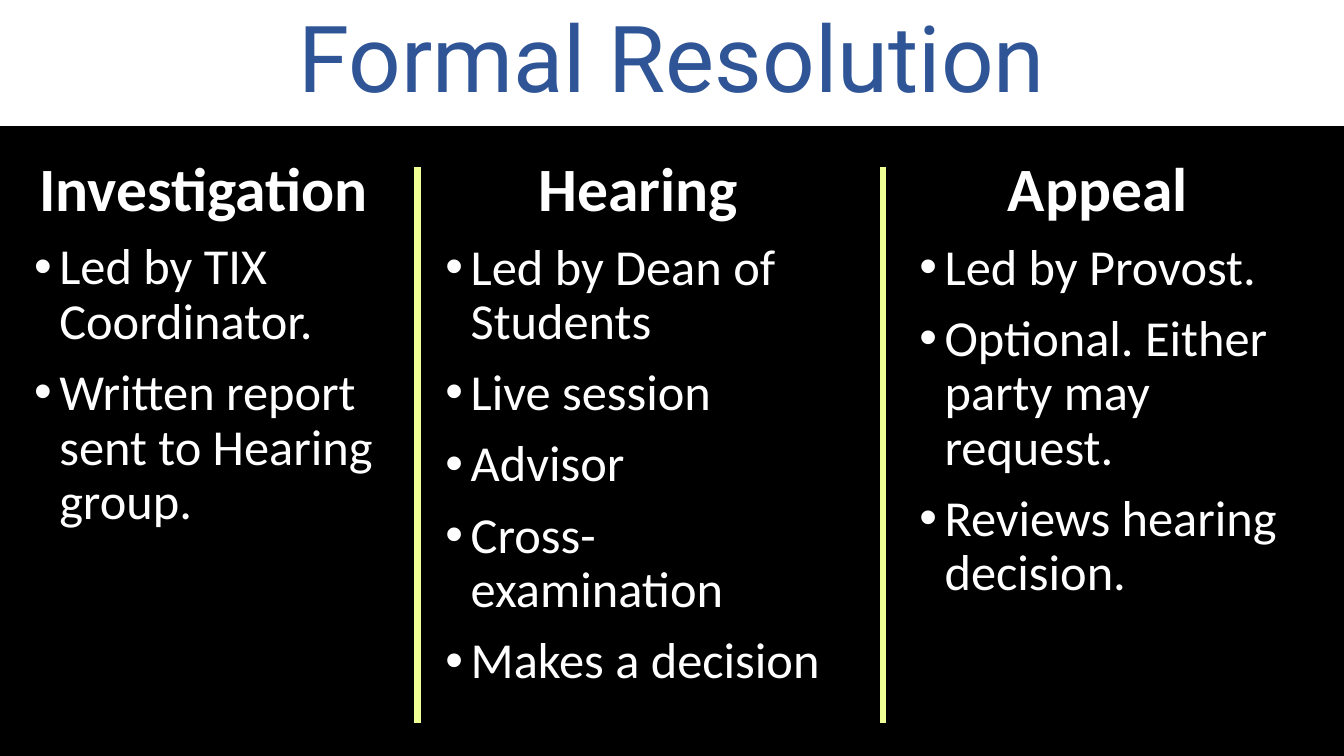
from lxml import etree
from pptx import Presentation
from pptx.dml.color import RGBColor
from pptx.enum.shapes import MSO_CONNECTOR, MSO_SHAPE
from pptx.enum.text import MSO_ANCHOR, PP_ALIGN
from pptx.oxml.ns import qn
from pptx.util import Inches, Pt

BLACK = RGBColor(0x00, 0x00, 0x00)
WHITE = RGBColor(0xFF, 0xFF, 0xFF)
BLUE = RGBColor(0x2F, 0x55, 0x97)
LIME = RGBColor(0xEF, 0xFF, 0x93)
CENTER = PP_ALIGN.CENTER
MIDDLE = MSO_ANCHOR.MIDDLE
RECTANGLE = MSO_SHAPE.RECTANGLE
STRAIGHT = MSO_CONNECTOR.STRAIGHT

COLUMN_TOP = 1.52
STAGES = [
    (0.24, 3.7, 4.44, "Investigation ", [
        "Led by TIX Coordinator.",
        "Written report sent to Hearing group.",
    ]),
    (4.32, 4.02, 5.82, "Hearing", [
        "Led by Dean of Students",
        "Live session",
        "Advisor",
        "Cross-examination",
        "Makes a decision",
    ]),
    (9.02, 3.88, 5.51, "Appeal ", [
        "Led by Provost.",
        "Optional. Either party may request.",
        "Reviews hearing decision.",
    ]),
]
DIVIDERS = [4.14, 8.76]


def write(paragraph, text, size, color, font="Calibri", bold=False):
    paragraph.text = text
    paragraph.line_spacing = 0.9
    paragraph.font.name = font
    paragraph.font.size = Pt(size)
    paragraph.font.bold = bold
    paragraph.font.color.rgb = color


def add_bullet(paragraph):
    properties = paragraph._p.get_or_add_pPr()
    properties.set("marL", str(Inches(0.25)))
    properties.set("indent", str(Inches(-0.25)))
    font = etree.Element(qn("a:buFont"), typeface="Arial")
    bullet = etree.Element(qn("a:buChar"), char="•")
    position = 0
    for index, child in enumerate(properties):
        if child.tag in (qn("a:lnSpc"), qn("a:spcBef"), qn("a:spcAft")):
            position = index + 1
    properties.insert(position, font)
    properties.insert(position + 1, bullet)


def add_stage(page, left, width, height, heading, points):
    box = page.shapes.add_textbox(
        Inches(left), Inches(COLUMN_TOP), Inches(width), Inches(height))
    frame = box.text_frame
    frame.word_wrap = True
    para = frame.paragraphs[0]
    write(para, heading, 44, WHITE, bold=True)
    para.alignment = CENTER
    para.space_after = Pt(12)
    for point in points:
        para = frame.add_paragraph()
        write(para, point, 36, WHITE)
        para.space_after = Pt(12)
        add_bullet(para)


def add_divider(page, x):
    line = page.shapes.add_connector(
        STRAIGHT, Inches(x), Inches(1.66), Inches(x), Inches(7.17))
    line.line.color.rgb = LIME
    line.line.width = Pt(4.5)
    etree.SubElement(line._element.spPr, qn("a:effectLst"))


def add_title(page, text):
    banner = page.shapes.add_shape(
        RECTANGLE, 0, 0, Inches(13.33), Inches(1.25))
    banner.shadow.inherit = False
    banner.fill.solid()
    banner.fill.fore_color.rgb = WHITE
    banner.line.fill.background()
    frame = banner.text_frame
    frame.word_wrap = True
    frame.vertical_anchor = MIDDLE
    para = frame.paragraphs[0]
    write(para, text, 66, BLUE, font="Roboto")
    para.alignment = CENTER


def main():
    deck = Presentation()
    deck.slide_width = Inches(13.33)
    deck.slide_height = Inches(7.5)
    page = deck.slides.add_slide(deck.slide_layouts[6])
    page.background.fill.solid()
    page.background.fill.fore_color.rgb = BLACK
    for stage in STAGES:
        add_stage(page, *stage)
    for x in DIVIDERS:
        add_divider(page, x)
    add_title(page, "Formal Resolution")
    deck.save("out.pptx")


if __name__ == "__main__":
    main()
